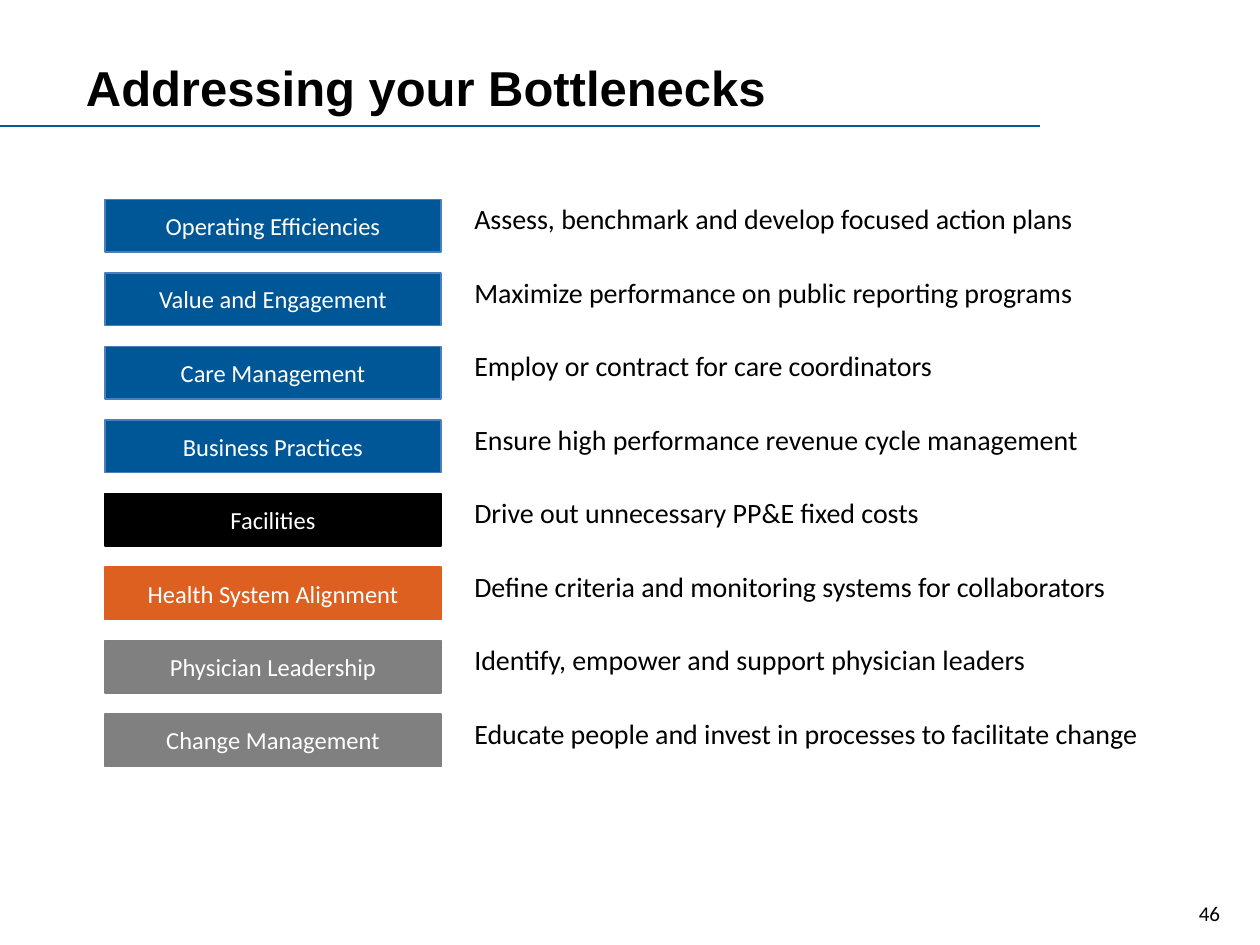
"""Build the slide on addressing bottlenecks."""
from pptx import Presentation
from pptx.dml.color import RGBColor
from pptx.enum.shapes import MSO_CONNECTOR, MSO_SHAPE
from pptx.enum.text import MSO_ANCHOR, PP_ALIGN
from pptx.oxml.ns import qn
from pptx.util import Pt
from lxml import etree

RECT, LINE = MSO_SHAPE.RECTANGLE, MSO_CONNECTOR.STRAIGHT
MID, TOP = MSO_ANCHOR.MIDDLE, MSO_ANCHOR.TOP
CENTER, LEFT = PP_ALIGN.CENTER, PP_ALIGN.LEFT
PX = 7620

BLUE = ("005797", "4B7EBC")
BLACK = ("000000", "000000")
ORANGE = ("DE6021", "DE6021")
GRAY = ("808080", "808080")

ROWS = [
    ("Operating Efficiencies", BLUE, "Assess, benchmark and develop focused action plans", 650),
    ("Value and Engagement", BLUE, "Maximize performance on public reporting programs", 730),
    ("Care Management", BLUE, "Employ or contract for care coordinators", 710),
    ("Business Practices", BLUE, "Ensure high performance revenue cycle management", 650),
    ("Facilities", BLACK, "Drive out unnecessary PP&E fixed costs", 650),
    ("Health System Alignment", ORANGE, "Define criteria and monitoring systems for collaborators", 650),
    ("Physician Leadership", GRAY, "Identify, empower and support physician leaders", 650),
    ("Change Management", GRAY, "Educate people and invest in processes to facilitate change", 670),
]
START, PITCH, HIGH = 190, 70, 50

TITLE = {"name": "Arial", "size": Pt(28), "bold": True}
LABEL = {"name": "Calibri", "size": Pt(14)}
BODY = {"name": "Calibri", "size": Pt(16)}
PAGE = {"name": "Calibri", "size": Pt(12)}


def color(code):
    """Turn a hex string into a colour."""
    return RGBColor.from_string(code)


def emu(*nums):
    """Scale px to EMU."""
    return [num * PX for num in nums]


def write(shape, text, form, ink="000000", align=LEFT, anchor=TOP):
    """Put styled text in a shape and return its paragraph."""
    frame = shape.text_frame
    frame.word_wrap = True
    frame.vertical_anchor = anchor
    para = frame.paragraphs[0]
    para.alignment = align
    run = para.add_run()
    run.text = text
    for key, value in form.items():
        setattr(run.font, key, value)
    run.font.color.rgb = color(ink)
    return para


def add_text(slide, box, text, form):
    """Add a text box and return its paragraph."""
    return write(slide.shapes.add_textbox(*emu(*box)), text, form)


def add_label(slide, box, text, paint):
    """Add a filled label."""
    fill, edge = paint
    shape = slide.shapes.add_shape(RECT, *emu(*box))
    shape.shadow.inherit = False
    shape.fill.solid()
    shape.fill.fore_color.rgb = color(fill)
    shape.line.color.rgb = color(edge)
    shape.line.width = Pt(0.75)
    write(shape, text, LABEL, "FFFFFF", CENTER, MID)


def add_rule(slide, ends):
    """Add the line under the title."""
    rule = slide.shapes.add_connector(LINE, *emu(*ends))
    rule.line.color.rgb = color("005B99")
    rule.line.width = Pt(0.75)
    etree.SubElement(rule._element.spPr, qn("a:effectLst"))


def main():
    """Build and save the slide."""
    deck = Presentation()
    deck.slide_width, deck.slide_height = emu(1200, 900)
    slide = deck.slides.add_slide(deck.slide_layouts[6])
    add_text(slide, (1130, 852, 70, 48), "46", PAGE)
    add_rule(slide, (0, 120, 990, 120))
    add_text(slide, (70, 49, 870, 60), "Addressing your Bottlenecks", TITLE)
    for i, (name, paint, plan, wide) in enumerate(ROWS):
        top = START + i * PITCH
        add_label(slide, (100, top, 320, HIGH), name, paint)
        para = add_text(slide, (440, top, wide, HIGH), plan, BODY)
        para.line_spacing = 0.9
    deck.save("out.pptx")


if __name__ == "__main__":
    main()
